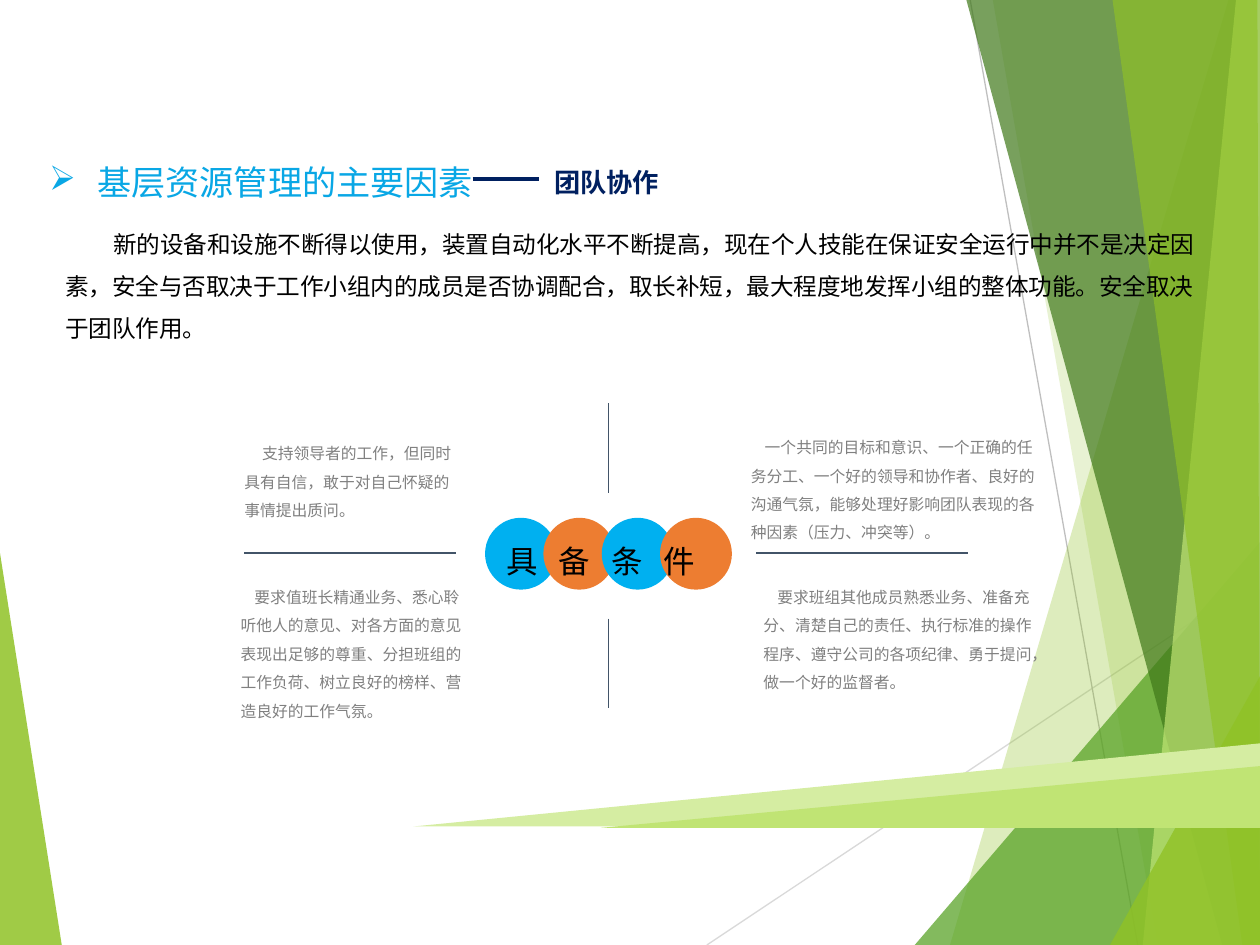
import pptx
import pptx.util
import pptx.dml.color
import pptx.enum.shapes
import pptx.enum.text
import pptx.oxml.ns
import lxml.etree

Inches = pptx.util.Inches
Pt = pptx.util.Pt
MSO_SHAPE = pptx.enum.shapes.MSO_SHAPE
qn = pptx.oxml.ns.qn

CJK = "Noto Sans CJK SC"
COLORS = {
    "lime": "90C226", "green": "54A021", "forest": "3F7819", "pale": "C0E474",
    "mist": "D5EDA2", "silver": "D9D9D9", "gray": "BFBFBF", "title": "09A7E5",
    "navy": "002060", "black": "000000", "note": "808080", "slate": "425468",
    "blue": "00B0F0", "orange": "ED7D31",
}

RIGHT_FACETS = [
    ([(9.75, 0), (7.54, 7.5), (10.01, 7.5), (10.01, 0)], "lime", 30),
    ([(7.88, 0), (9.19, 7.5), (10.01, 7.5), (10.01, 0)], "lime", 20),
    ([(7.26, 7.5), (10.01, 4.29), (10.01, 7.5)], "green", 72),
    ([(7.67, 0), (9.7, 7.5), (10.01, 7.5), (10.01, 0)], "forest", 70),
    ([(9.81, 0), (9.07, 7.5), (10.01, 7.5), (10.01, 0)], "pale", 70),
    ([(8.83, 0), (9.86, 7.5), (10, 7.5), (9.98, 0)], "lime", 65),
    ([(8.81, 7.5), (10.01, 5.35), (10.01, 7.5)], "lime", 80),
]

NOTES = [
    (1.88, 3.42, 1.85, 0.69, 0.14, "支持领导者的工作，但同时具有自信，敢于对自己怀疑的事情提出质问。"),
    (5.9, 3.37, 2.46, 0.78, 0.11, "一个共同的目标和意识、一个正确的任务分工、一个好的领导和协作者、良好的沟通气氛，能够处理好影响团队表现的各种因素（压力、冲突等）。"),
    (6, 4.56, 2.3, 1.06, 0.11, "要求班组其他成员熟悉业务、准备充分、清楚自己的责任、执行标准的操作程序、遵守公司的各项纪律、勇于提问，做一个好的监督者。"),
    (1.85, 4.56, 1.95, 1.88, 0.11, "要求值班长精通业务、悉心聆听他人的意见、对各方面的意见表现出足够的尊重、分担班组的工作负荷、树立良好的榜样、营造良好的工作气氛。"),
]


def rgb(name):
    return pptx.dml.color.RGBColor.from_string(COLORS[name])


def paint(shape, color, opacity=100):
    shape.shadow.inherit = False
    shape.fill.solid()
    shape.fill.fore_color.rgb = rgb(color)
    shape.line.fill.background()
    if opacity < 100:
        clr = shape.fill._xPr.find(qn("a:solidFill"))[0]
        lxml.etree.SubElement(clr, qn("a:alpha"), val=str(opacity * 1000))


def add_facet(s, points, color, opacity=100):
    points = [(Inches(x), Inches(y)) for x, y in points]
    builder = s.shapes.build_freeform(*points[0])
    builder.add_line_segments(points[1:], close=True)
    paint(builder.convert_to_shape(), color, opacity)


def add_preset(s, kind, x, y, w, h, color):
    sp = s.shapes.add_shape(kind, Inches(x), Inches(y), Inches(w), Inches(h))
    paint(sp, color)
    return sp


def add_line(s, x1, y1, x2, y2, color, width):
    line = s.shapes.add_connector(
        pptx.enum.shapes.MSO_CONNECTOR.STRAIGHT,
        Inches(x1), Inches(y1), Inches(x2), Inches(y2))
    line.line.color.rgb = rgb(color)
    line.line.width = Pt(width)
    lxml.etree.SubElement(line._element.spPr, qn("a:effectLst"))


def write(tf, text, size, color, font=CJK, bold=False, spacing=1.0, left=0, indent=0):
    tf.word_wrap = True
    tf.vertical_anchor = pptx.enum.text.MSO_ANCHOR.TOP
    p = tf.paragraphs[0]
    p.alignment = pptx.enum.text.PP_ALIGN.LEFT
    p.line_spacing = spacing
    pPr = p._p.get_or_add_pPr()
    pPr.set("marL", str(Inches(left)))
    pPr.set("indent", str(Inches(indent)))
    r = p.add_run()
    r.text = text
    r.font.size = Pt(size)
    r.font.bold = bold
    r.font.name = font
    r.font.color.rgb = rgb(color)
    lxml.etree.SubElement(r._r.get_or_add_rPr(), qn("a:ea"), typeface=CJK)
    return p, r


def add_text(s, x, y, w, h, text, size, color, inset=(0.1, 0.05), **style):
    tf = s.shapes.add_textbox(Inches(x), Inches(y), Inches(w), Inches(h)).text_frame
    tf.margin_left = tf.margin_right = Inches(inset[0])
    tf.margin_top = tf.margin_bottom = Inches(inset[1])
    return write(tf, text, size, color, **style)


def add_title(s, text):
    title = s.shapes.title
    title.left, title.top = Inches(0.29), Inches(1.2)
    title.width, title.height = Inches(4.96), Inches(0.44)
    p, r = write(title.text_frame, text, 19.5, "title", spacing=1.1, left=0.38, indent=-0.38)
    lxml.etree.SubElement(p._p.get_or_add_pPr(), qn("a:buChar"), char="➢")


def add_background(s):
    add_facet(s, [(0, 4.39), (0.49, 7.5), (0, 7.5)], "lime", 85)
    add_line(s, 5.61, 7.5, 10.01, 4.57, "silver", 0.75)
    add_line(s, 7.7, 0, 9.03, 7.5, "gray", 0.75)
    for facet in RIGHT_FACETS:
        add_facet(s, *facet)
    add_facet(s, [(10, 5.9), (10, 6.51), (6.73, 6.56), (3.28, 6.56)], "mist")
    wedge = add_preset(s, MSO_SHAPE.ISOSCELES_TRIANGLE, 4.77, 6.08, 5.23, 0.49, "pale")
    wedge.adjustments[0] = 1


def add_conditions(s):
    for i in range(4):
        add_preset(s, MSO_SHAPE.OVAL, 3.85 + i * 0.463, 4.11, 0.57, 0.57,
                   ("blue", "orange")[i % 2])
    for y in (3.2, 4.91):
        add_line(s, 4.83, y, 4.83, y + 0.71, "slate", 1)
    for x in (1.94, 6):
        add_line(s, x, 4.39, x + 1.68, 4.39, "slate", 1)
    for x, y, w, h, indent, text in NOTES:
        add_text(s, x, y, w, h, text, 9, "note", inset=(0.06, 0.03), spacing=1.5, indent=indent)
    p, r = add_text(s, 3.92, 4.25, 1.87, 0.4, "具 备 条 件", 18, "black", font="Arial")
    r._r.get_or_add_rPr().set("spc", "400")


def main():
    prs = pptx.Presentation()
    prs.slide_width, prs.slide_height = Inches(10), Inches(7.5)
    s = prs.slides.add_slide(prs.slide_layouts[5])
    add_background(s)
    add_title(s, "基层资源管理的主要因素")
    add_line(s, 3.75, 1.42, 4.28, 1.42, "navy", 2)
    add_text(s, 4.3, 1.27, 1.36, 0.35, "团队协作", 15, "navy", bold=True)
    add_text(s, 0.42, 1.66, 9.28, 1.13,
             "新的设备和设施不断得以使用，装置自动化水平不断提高，现在个人技能在保证安全运行中并不是决定因素，"
             "安全与否取决于工作小组内的成员是否协调配合，取长补短，最大程度地发挥小组的整体功能。安全取决于团队作用。",
             13.5, "black", font="Arial", spacing=1.5, indent=0.38)
    add_conditions(s)
    prs.save("out.pptx")


if __name__ == "__main__":
    main()
